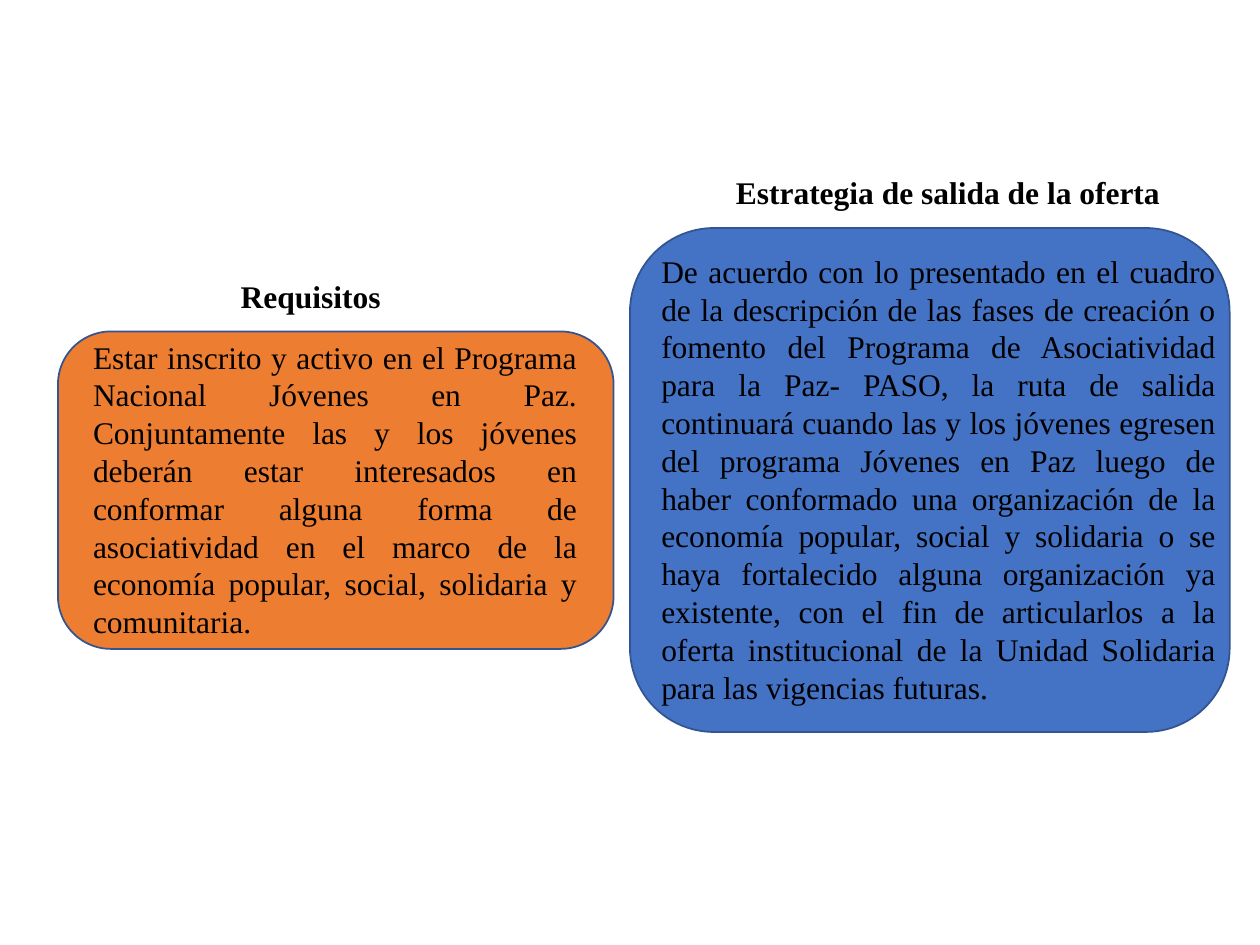
import dataclasses

import pptx
import pptx.dml.color
import pptx.enum.shapes
import pptx.enum.text
import pptx.util

Pt = pptx.util.Pt
RGBColor = pptx.dml.color.RGBColor
PP_ALIGN = pptx.enum.text.PP_ALIGN
MSO_ANCHOR = pptx.enum.text.MSO_ANCHOR
MSO_AUTO_SIZE = pptx.enum.text.MSO_AUTO_SIZE


@dataclasses.dataclass(frozen=True)
class Theme:
    font: str = "Times New Roman"
    text_size: float = 18
    text: str = "000000"
    outline: str = "325491"
    requirements: str = "ED7D31"
    exit_strategy: str = "4472C4"


def set_attributes(target, values):
    for name, value in values.items():
        setattr(target, name, value)


class SlideBuilder:
    heading_height = 29
    heading_rise = 35

    def __init__(self, slide, theme):
        self.slide = slide
        self.theme = theme

    def card(self, left, top, width, height, color):
        shape = self.slide.shapes.add_shape(
            pptx.enum.shapes.MSO_SHAPE.ROUNDED_RECTANGLE,
            Pt(left), Pt(top), Pt(width), Pt(height))
        shape.shadow.inherit = False
        shape.fill.solid()
        shape.fill.fore_color.rgb = RGBColor.from_string(color)
        shape.line.color.rgb = RGBColor.from_string(self.theme.outline)
        shape.line.width = Pt(1)

    def set_text(self, shape, text, alignment, bold=False):
        frame = shape.text_frame
        set_attributes(frame, {
            "text": text,
            "word_wrap": True,
            "auto_size": MSO_AUTO_SIZE.SHAPE_TO_FIT_TEXT,
            "vertical_anchor": MSO_ANCHOR.TOP,
        })
        paragraph = frame.paragraphs[0]
        set_attributes(paragraph, {"alignment": alignment, "space_before": Pt(0)})
        font = paragraph.runs[0].font
        set_attributes(font, {
            "name": self.theme.font,
            "size": Pt(self.theme.text_size),
            "bold": bold,
        })
        font.color.rgb = RGBColor.from_string(self.theme.text)

    def body(self, left, top, width, height, text):
        shape = self.slide.shapes.add_textbox(Pt(left), Pt(top), Pt(width), Pt(height))
        self.set_text(shape, text, PP_ALIGN.JUSTIFY)

    def heading(self, index, left, card_top, width, text):
        """Place the layout's heading placeholder just above its card."""
        shape = self.slide.placeholders[index]
        set_attributes(shape, {
            "left": Pt(left),
            "top": Pt(card_top - self.heading_rise),
            "width": Pt(width),
            "height": Pt(self.heading_height),
        })
        self.set_text(shape, text, PP_ALIGN.LEFT, bold=True)

    def remove_empty_placeholders(self):
        for shape in list(self.slide.placeholders):
            if not shape.text_frame.text:
                shape.element.getparent().remove(shape.element)


def main():
    presentation = pptx.Presentation()
    set_attributes(presentation, {"slide_width": Pt(720), "slide_height": Pt(540)})
    comparison_layout = presentation.slide_layouts[4]
    theme = Theme()
    builder = SlideBuilder(presentation.slides.add_slide(comparison_layout), theme)

    exit_top, requirements_top = 130.3, 189.4
    builder.card(360, exit_top, 342.7, 288, theme.exit_strategy)
    builder.card(33.1, requirements_top, 317.5, 181.4, theme.requirements)
    builder.body(
        46.1, requirements_top, 290.9, 181.4,
        "Estar inscrito y activo en el Programa Nacional Jóvenes en Paz. "
        "Conjuntamente las y los jóvenes deberán estar interesados en conformar "
        "alguna forma de asociatividad en el marco de la economía popular, social, "
        "solidaria y comunitaria.")
    builder.body(
        370.8, 140.4, 331.2, 269.3,
        "De acuerdo con lo presentado en el cuadro de la descripción de las fases de "
        "creación o fomento del Programa de Asociatividad para la Paz- PASO, la ruta "
        "de salida continuará cuando las y los jóvenes egresen del programa Jóvenes "
        "en Paz luego de haber conformado una organización de la economía popular, "
        "social y solidaria o se haya fortalecido alguna organización ya existente, "
        "con el fin de articularlos a la oferta institucional de la Unidad Solidaria "
        "para las vigencias futuras.")
    builder.heading(1, 130.3, requirements_top, 290.9, "Requisitos")
    builder.heading(3, 413.3, exit_top, 306, "Estrategia de salida de la oferta")
    builder.remove_empty_placeholders()

    presentation.save("out.pptx")


if __name__ == "__main__":
    main()
